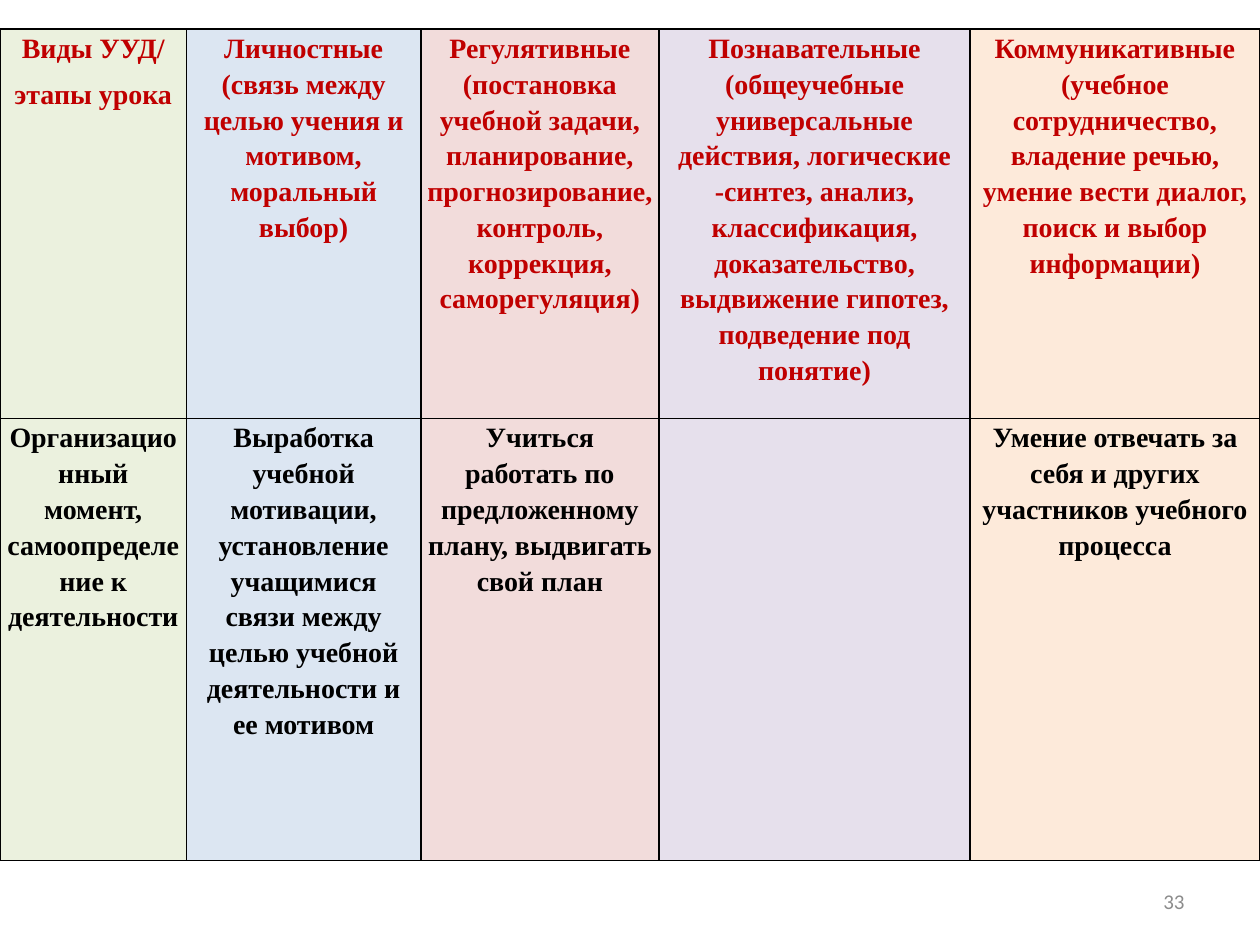
from pptx import Presentation
from pptx.util import Inches, Pt
from pptx.dml.color import RGBColor as RGB
from pptx.enum.text import PP_ALIGN as Align, MSO_ANCHOR as Anchor
from pptx.oxml import parse_xml
from pptx.oxml.ns import nsdecls

RED = RGB(0xC0, 0x00, 0x00)
BLACK = RGB(0x00, 0x00, 0x00)
GREY = RGB(0x8C, 0x8C, 0x8C)
GREEN = RGB(0xEB, 0xF1, 0xDE)
BLUE = RGB(0xDC, 0xE6, 0xF2)
PINK = RGB(0xF2, 0xDC, 0xDB)
LILAC = RGB(0xE6, 0xE0, 0xEC)
PEACH = RGB(0xFD, 0xEA, 0xDA)

# Columns: width, fill, heading, text of the stage
COLS = [
    (1.48, GREEN, "Виды УУД/\nэтапы урока",
     "Организационный момент, самоопределение к деятельности"),
    (1.86, BLUE,
     "Личностные (связь между целью учения и мотивом, моральный выбор)",
     "Выработка учебной мотивации, установление учащимися связи между "
     "целью учебной деятельности и ее мотивом"),
    (1.89, PINK,
     "Регулятивные (постановка учебной задачи, планирование, "
     "прогнозирование, контроль, коррекция, саморегуляция)",
     "Учиться работать по предложенному плану, выдвигать свой план"),
    (2.47, LILAC,
     "Познавательные (общеучебные универсальные действия, логические "
     "-синтез, анализ, классификация, доказательство, выдвижение гипотез, "
     "подведение под понятие)", ""),
    (2.3, PEACH,
     "Коммуникативные (учебное сотрудничество, владение речью, "
     "умение вести диалог, поиск и выбор информации)",
     "Умение отвечать за себя и других участников учебного процесса"),
]
ROWS = [(3.09, RED), (3.51, BLACK)]  # height, text colour
TOP = 0.23
PAGE = "33"


def style(para, name, size, color, bold=False):
    for run in para.runs:
        font = run.font
        font.name, font.size, font.bold = name, Pt(size), bold
        font.color.rgb = color


def border(cell):
    props = cell._tc.get_or_add_tcPr()
    for i, side in enumerate(("lnL", "lnR", "lnT", "lnB")):
        props.insert(i, parse_xml(
            f'<a:{side} {nsdecls("a")} w="{Pt(1)}"><a:solidFill>'
            f'<a:srgbClr val="{BLACK}"/></a:solidFill></a:{side}>'))


def fill_cell(cell, text, back, color):
    cell.fill.solid()
    cell.fill.fore_color.rgb = back
    cell.margin_left = cell.margin_right = Inches(0.05)
    cell.margin_top = cell.margin_bottom = 0
    cell.text_frame.text = text
    for i, para in enumerate(cell.text_frame.paragraphs):
        para.alignment = Align.CENTER
        para.line_spacing = 1.15
        if i:
            para.space_before = Pt(6)
        style(para, "Times New Roman", 16, color, True)
    border(cell)


prs = Presentation()
prs.slide_width, prs.slide_height = Inches(10), Inches(7.5)
slide = prs.slides.add_slide(prs.slide_layouts[6])

# Table of learning actions by lesson stage
high = sum(row[0] for row in ROWS)
table = slide.shapes.add_table(len(ROWS), len(COLS), 0, Inches(TOP),
                               prs.slide_width, Inches(high)).table
for r, (height, color) in enumerate(ROWS):
    table.rows[r].height = Inches(height)
    for c, (width, back, *texts) in enumerate(COLS):
        table.columns[c].width = Inches(width)
        fill_cell(table.cell(r, c), texts[r], back, color)

# Slide number
box = slide.shapes.add_textbox(Inches(7.17), Inches(6.95),
                               Inches(2.33), Inches(0.4))
frame = box.text_frame
frame.word_wrap = True
frame.vertical_anchor = Anchor.MIDDLE
frame.text = PAGE
para = frame.paragraphs[0]
para.alignment = Align.RIGHT
style(para, "Calibri", 12, GREY)

prs.save("out.pptx")
